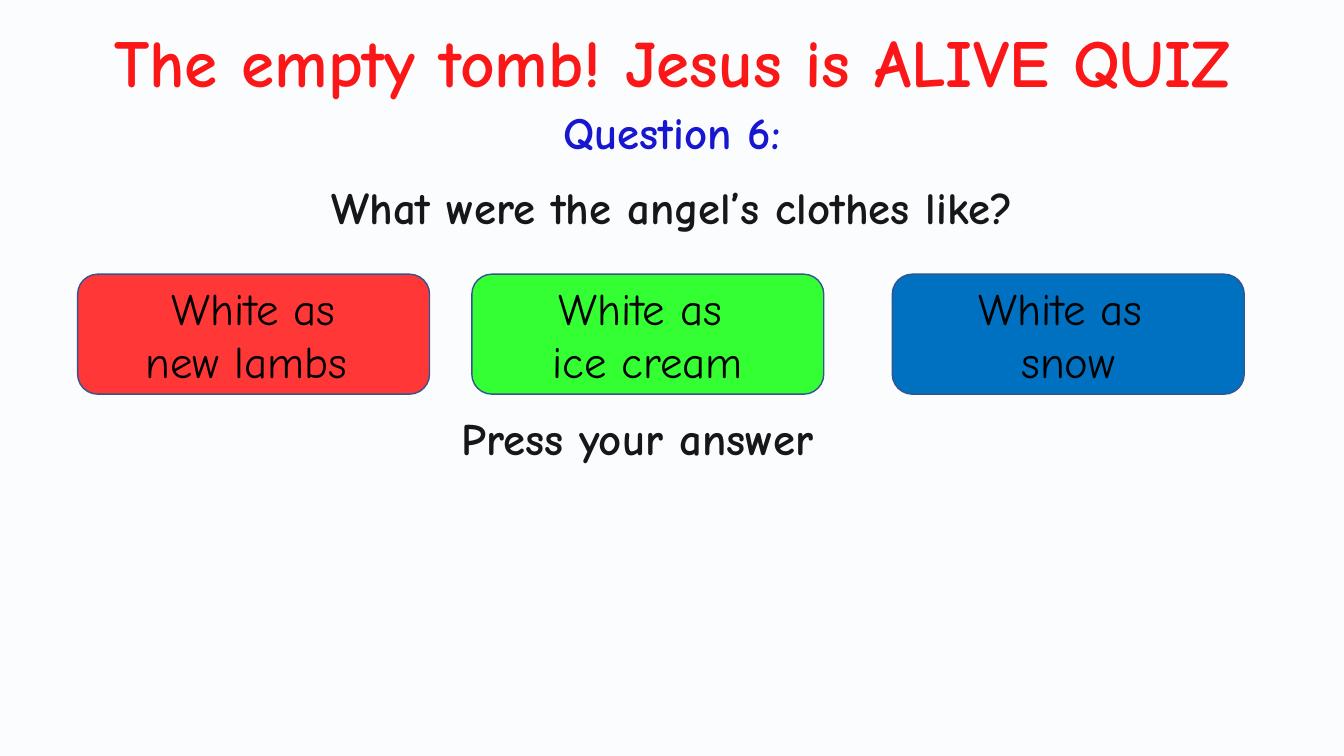
import dataclasses

import lxml.etree
import pptx
import pptx.dml.color
import pptx.enum.shapes
import pptx.enum.text
import pptx.oxml.ns
import pptx.shapes.autoshape
import pptx.slide
import pptx.text.text
import pptx.util

Inches = pptx.util.Inches
Pt = pptx.util.Pt
Align = pptx.enum.text.PP_ALIGN
ShapeType = pptx.enum.shapes.MSO_SHAPE

FONT = "Comic Neue"
COLOURS = {
    "title": "FF0000",
    "number": "0000CC",
    "text": "000000",
    "outline": "325491",
    "veil": "DAE3F3",
    "red": "FF3737",
    "green": "33FF33",
    "blue": "0070C0",
}
ANSWER_TOP, ANSWER_WIDTH, ANSWER_HEIGHT = 2.72, 3.49, 1.19


@dataclasses.dataclass
class Caption:
    text: str
    left: float
    top: float
    width: float
    height: float
    colour: str = "text"
    size: int = 32
    align: Align = Align.CENTER
    wrap: bool = True
    line_spacing: float | pptx.util.Length | None = None
    space_before: float = 0


@dataclasses.dataclass
class Answer:
    lines: tuple[str, str]
    left: float
    colour: str


CAPTIONS = [
    Caption("The empty tomb! Jesus is ALIVE QUIZ", -0.03, 0.15, 13.4, 0.91,
            colour="title", size=48, wrap=False),
    Caption("What were the angel’s clothes like?", 0.89, 1.81, 11.56, 1.19,
            line_spacing=Pt(33), space_before=10),
    Caption("Press your answer", 4.48, 4.09, 6.73, 0.72,
            align=Align.LEFT, line_spacing=0.9, space_before=7.5),
    Caption("Question 6:", 4.46, 0.99, 4.41, 0.64, colour="number"),
]
ANSWERS = [
    Answer(("White as", "new lambs "), 0.77, "red"),
    Answer(("White as ", "ice cream"), 4.68, "green"),
    Answer(("White as ", "snow"), 8.85, "blue"),
]


def colour_of(name: str) -> pptx.dml.color.RGBColor:
    return pptx.dml.color.RGBColor.from_string(COLOURS[name])


def style_paragraph(paragraph: pptx.text.text._Paragraph, align: Align,
                    size: int, colour: str, bold: bool) -> None:
    paragraph.alignment = align
    paragraph.font.name = FONT
    paragraph.font.size = Pt(size)
    paragraph.font.bold = bold
    paragraph.font.color.rgb = colour_of(colour)


def add_caption(slide: pptx.slide.Slide, caption: Caption) -> None:
    box = slide.shapes.add_textbox(Inches(caption.left), Inches(caption.top),
                                   Inches(caption.width), Inches(caption.height))
    box.text_frame.word_wrap = caption.wrap
    paragraph = box.text_frame.paragraphs[0]
    paragraph.text = caption.text
    style_paragraph(paragraph, caption.align, caption.size, caption.colour, True)
    paragraph.line_spacing = caption.line_spacing
    paragraph.space_before = Pt(caption.space_before)


def add_panel(slide: pptx.slide.Slide, shape_type: ShapeType, left: float, top: float,
              width: float, height: float, colour: str) -> pptx.shapes.autoshape.Shape:
    shape = slide.shapes.add_shape(shape_type, Inches(left), Inches(top),
                                   Inches(width), Inches(height))
    shape.shadow.inherit = False
    shape.fill.solid()
    shape.fill.fore_color.rgb = colour_of(colour)
    shape.line.color.rgb = colour_of("outline")
    shape.line.width = Pt(1)
    return shape


def add_veil(slide: pptx.slide.Slide) -> None:
    veil = add_panel(slide, ShapeType.RECTANGLE, -0.43, -0.87, 14.19, 8.73, "veil")
    qn = pptx.oxml.ns.qn
    fill_colour = veil.fill._xPr.find(qn("a:solidFill")).find(qn("a:srgbClr"))
    lxml.etree.SubElement(fill_colour, qn("a:alpha"), val="10000")


def add_answer(slide: pptx.slide.Slide, answer: Answer) -> None:
    button = add_panel(slide, ShapeType.ROUNDED_RECTANGLE, answer.left, ANSWER_TOP,
                       ANSWER_WIDTH, ANSWER_HEIGHT, answer.colour)
    button.text_frame.word_wrap = True
    button.text_frame.vertical_anchor = pptx.enum.text.MSO_ANCHOR.MIDDLE
    button.text_frame.text = "\n".join(answer.lines)
    for paragraph in button.text_frame.paragraphs:
        style_paragraph(paragraph, Align.CENTER, 32, "text", False)


def main() -> None:
    presentation = pptx.Presentation()
    presentation.slide_width = Inches(13.33)
    presentation.slide_height = Inches(7.5)
    slide = presentation.slides.add_slide(presentation.slide_layouts[6])
    for caption in CAPTIONS:
        add_caption(slide, caption)
    add_veil(slide)
    for answer in ANSWERS:
        add_answer(slide, answer)
    presentation.save("out.pptx")


if __name__ == "__main__":
    main()
